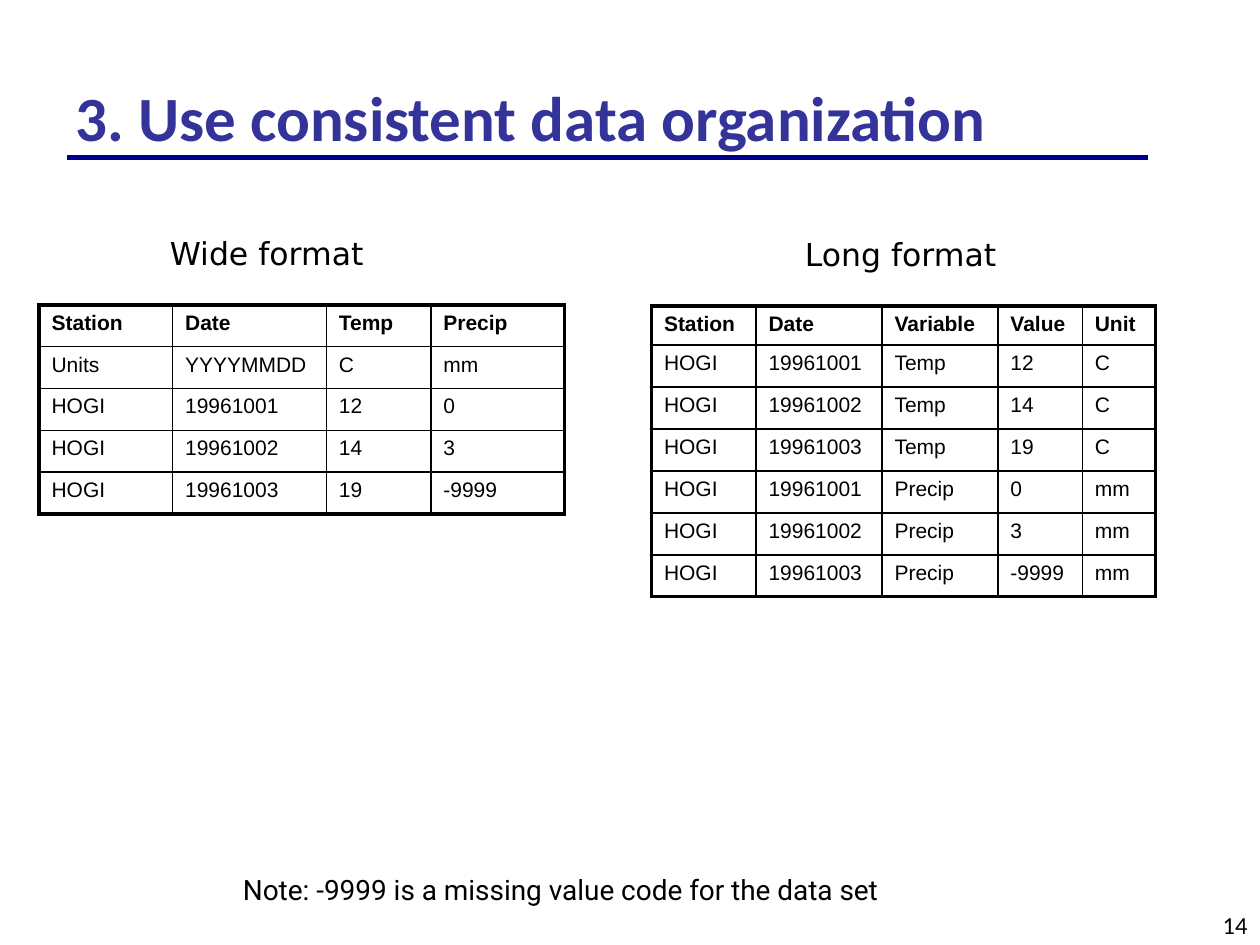
from itertools import product
from lxml import etree
from pptx import Presentation
from pptx.dml.color import RGBColor
from pptx.enum.shapes import MSO_CONNECTOR
from pptx.enum.text import MSO_ANCHOR, MSO_AUTO_SIZE, PP_ALIGN
from pptx.oxml.ns import qn
from pptx.util import Inches, Pt

LINE = MSO_CONNECTOR.STRAIGHT
MIDDLE, TOP = MSO_ANCHOR.MIDDLE, MSO_ANCHOR.TOP
GROW, FIXED = MSO_AUTO_SIZE.SHAPE_TO_FIT_TEXT, MSO_AUTO_SIZE.NONE
LEFT, RIGHT = PP_ALIGN.LEFT, PP_ALIGN.RIGHT


def shade(code):
    return RGBColor.from_string(code)


class Page:
    """Draws on one slide with a grid of 100 columns and 75 rows."""

    ink = "000000"
    thin, thick = 1, 2.25
    fonts = {
        "title": {"name": "Calibri", "size": Pt(36), "bold": True},
        "label": {"name": "DejaVu Sans", "size": Pt(18)},
        "note": {"name": "Roboto", "size": Pt(16)},
        "number": {"name": "Calibri", "size": Pt(14)},
        "head": {"name": "Arial", "size": Pt(12), "bold": True},
        "body": {"name": "Arial", "size": Pt(12), "bold": False},
    }

    def __init__(self, deck):
        self.slide = deck.slides.add_slide(deck.slide_layouts[6])
        self.shapes = self.slide.shapes
        self.unit = deck.slide_width / 100

    def span(self, *cells):
        return [round(cell * self.unit) for cell in cells]

    def words(self, frame, text, kind, color=ink, align=LEFT):
        line = frame.paragraphs[0]
        line.alignment = align
        run = line.add_run()
        run.text = text
        for key, value in self.fonts[kind].items():
            setattr(run.font, key, value)
        run.font.color.rgb = shade(color)

    def text(self, text, kind, box, color=ink, align=LEFT, anchor=TOP, grow=False):
        frame = self.shapes.add_textbox(*self.span(*box)).text_frame
        form = {
            "word_wrap": not grow,
            "auto_size": GROW if grow else FIXED,
            "vertical_anchor": anchor,
        }
        for key, value in form.items():
            setattr(frame, key, value)
        self.words(frame, text, kind, color, align)

    def rule(self, ends, color, width):
        line = self.shapes.add_connector(LINE, *self.span(*ends))
        line.line.color.rgb = shade(color)
        line.line.width = Pt(width)
        etree.SubElement(line._element.spPr, qn("a:effectLst"))

    def edge(self, cell, sides):
        props = cell._tc.get_or_add_tcPr()
        for spot, (side, outer) in enumerate(sides.items()):
            width = Pt(self.thick if outer else self.thin)
            line = etree.Element(qn(f"a:ln{side}"), w=str(width))
            fill = etree.SubElement(line, qn("a:solidFill"))
            etree.SubElement(fill, qn("a:srgbClr"), val=self.ink)
            props.insert(spot, line)

    def table(self, left, top, wide, high, data):
        rows, cols = len(data), len(wide)
        box = self.span(left, top, sum(wide), sum(high))
        table = self.shapes.add_table(rows, cols, *box).table
        table.first_row = table.horz_banding = False
        for col, width in zip(table.columns, self.span(*wide)):
            col.width = width
        for row, height in zip(table.rows, self.span(*high)):
            row.height = height
        for r, c in product(range(rows), range(cols)):
            cell = table.cell(r, c)
            cell.fill.background()
            self.words(cell.text_frame, data[r][c], "body" if r else "head")
            self.edge(cell, {"L": c == 0, "R": c == cols - 1,
                             "T": r == 0, "B": r == rows - 1})


def main():
    deck = Presentation()
    deck.slide_width, deck.slide_height = Inches(10), Inches(7.5)
    page = Page(deck)

    page.rule((5.3, 12.5, 91.1, 12.5), "000090", 2.75)
    page.text("3. Use consistent data organization", "title",
              (5, 3, 90, 12.5), color="333399", anchor=MIDDLE)

    dates = ["19961001", "19961002", "19961003"]
    series = {("Temp", "C"): ["12", "14", "19"],
              ("Precip", "mm"): ["0", "3", "-9999"]}
    wide = [["Station", "Date", "Temp", "Precip"],
            ["Units", "YYYYMMDD", "C", "mm"]]
    wide += [["HOGI", *row] for row in zip(dates, *series.values())]
    long = [["Station", "Date", "Variable", "Value", "Unit"]]
    long += [["HOGI", date, name, value, unit]
             for (name, unit), values in series.items()
             for date, value in zip(dates, values)]

    page.table(3.1, 24.2, [10.6, 12.2, 8.3, 10.6], [3.32] * 5, wide)
    page.table(51.7, 24.3, [8.3, 10, 9.2, 6.7, 5.8], [3.1] + [3.33] * 6, long)

    page.text("Wide format", "label", (12.5, 18.1, 17.6, 4), grow=True)
    page.text("Long format", "label", (62.9, 18.2, 17.5, 4), grow=True)
    page.text("Note: -9999 is a missing value code for the data set", "note",
              (18.3, 68.8, 53.3, 3.7), grow=True)
    page.text("14", "number", (76.7, 71.7, 23.3, 3.3), align=RIGHT)
    deck.save("out.pptx")


if __name__ == "__main__":
    main()
